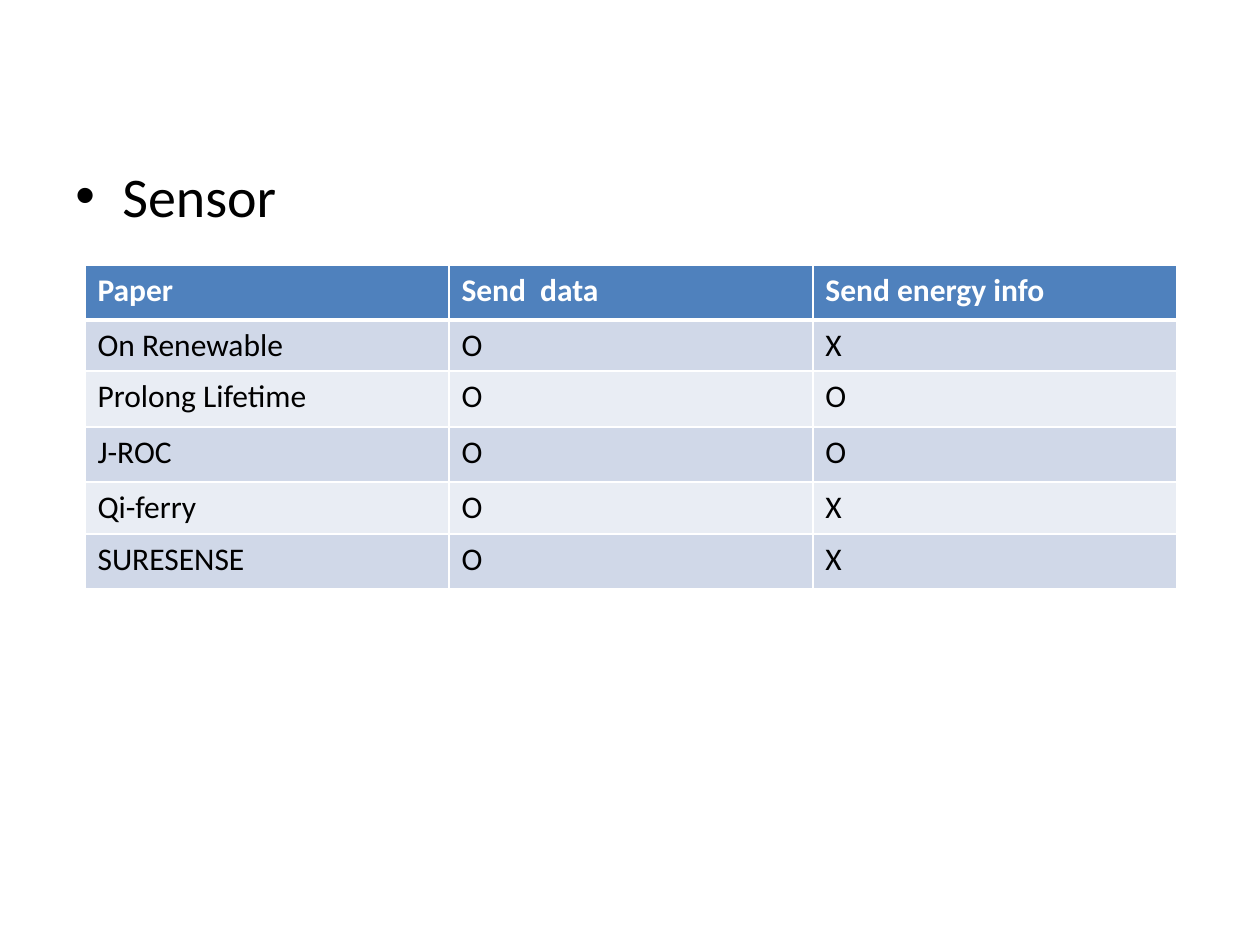
import pptx
import pptx.util
import pptx.dml.color
import pptx.oxml
import pptx.oxml.ns

RGBColor = pptx.dml.color.RGBColor
Pt = pptx.util.Pt

HEADING = "Sensor"
HEADER = ("Paper", "Send  data", "Send energy info")
PAPERS = [
    ("On Renewable", "O", "X"),
    ("Prolong Lifetime", "O", "O"),
    ("J-ROC", "O", "O"),
    ("Qi-ferry", "O", "X"),
    ("SURESENSE", "O", "X"),
]

FONT = "Calibri"
BLACK = RGBColor(0x00, 0x00, 0x00)
WHITE = RGBColor(0xFF, 0xFF, 0xFF)
HEADER_BLUE = RGBColor(0x4F, 0x81, 0xBD)
BANDS = (RGBColor(0xD0, 0xD8, 0xE8), RGBColor(0xE9, 0xED, 0xF4))

# Lengths in px, 126 to the inch
SLIDE_SIZE = (1260, 945)
HEADING_BOX = (63, 155, 1134, 689)
BULLET_INDENT = 47
TABLE_LEFT, TABLE_TOP = 85, 265
COLUMN_WIDTH = 364
ROW_HEIGHTS = (55, 51, 56, 55, 52, 55)


def px(length):
    return pptx.util.Emu(round(length * 914400 / 126))


def set_font(paragraph, size, color, bold=False):
    font = paragraph.font
    font.name, font.size, font.bold = FONT, Pt(size), bold
    font.color.rgb = color


def add_border(cell, side, points):
    line = pptx.oxml.parse_xml(
        f'<a:ln{side} {pptx.oxml.ns.nsdecls("a")} w="{Pt(points)}">'
        f'<a:solidFill><a:srgbClr val="{WHITE}"/></a:solidFill></a:ln{side}>')
    cell._tc.get_or_add_tcPr().append(line)


def add_heading(slide):
    frame = slide.shapes.add_textbox(*map(px, HEADING_BOX)).text_frame
    frame.word_wrap = True
    heading = frame.paragraphs[0]
    heading.text = HEADING
    heading.space_before = Pt(6.4)
    set_font(heading, 32, BLACK)
    properties = heading._p.get_or_add_pPr()
    properties.set("marL", str(px(BULLET_INDENT)))
    properties.set("indent", str(-px(BULLET_INDENT)))
    namespace = pptx.oxml.ns.nsdecls("a")
    bullet = (f'<a:buFont {namespace} typeface="Arial"/>',
              f'<a:buChar {namespace} char="•"/>')
    default_run = properties.find(pptx.oxml.ns.qn("a:defRPr"))
    for part in bullet:
        default_run.addprevious(pptx.oxml.parse_xml(part))


def add_comparison(slide):
    rows = [HEADER, *PAPERS]
    table = slide.shapes.add_table(
        len(rows), len(HEADER), px(TABLE_LEFT), px(TABLE_TOP),
        px(COLUMN_WIDTH * len(HEADER)), px(sum(ROW_HEIGHTS))).table
    for column in table.columns:
        column.width = px(COLUMN_WIDTH)
    for r, (texts, height) in enumerate(zip(rows, ROW_HEIGHTS)):
        table.rows[r].height = px(height)
        is_header = r == 0
        for c, text in enumerate(texts):
            cell = table.cell(r, c)
            cell.text = text
            set_font(cell.text_frame.paragraphs[0], 18,
                     WHITE if is_header else BLACK, is_header)
            # Borders come before the fill in the cell properties
            for side in "LRTB":
                thick = (r, side) in ((0, "B"), (1, "T"))
                add_border(cell, side, 3 if thick else 1)
            cell.fill.solid()
            cell.fill.fore_color.rgb = (
                HEADER_BLUE if is_header else BANDS[(r - 1) % 2])


def main():
    deck = pptx.Presentation()
    deck.slide_width, deck.slide_height = map(px, SLIDE_SIZE)
    slide = deck.slides.add_slide(deck.slide_layouts[6])
    add_heading(slide)
    add_comparison(slide)
    deck.save("out.pptx")


if __name__ == "__main__":
    main()
